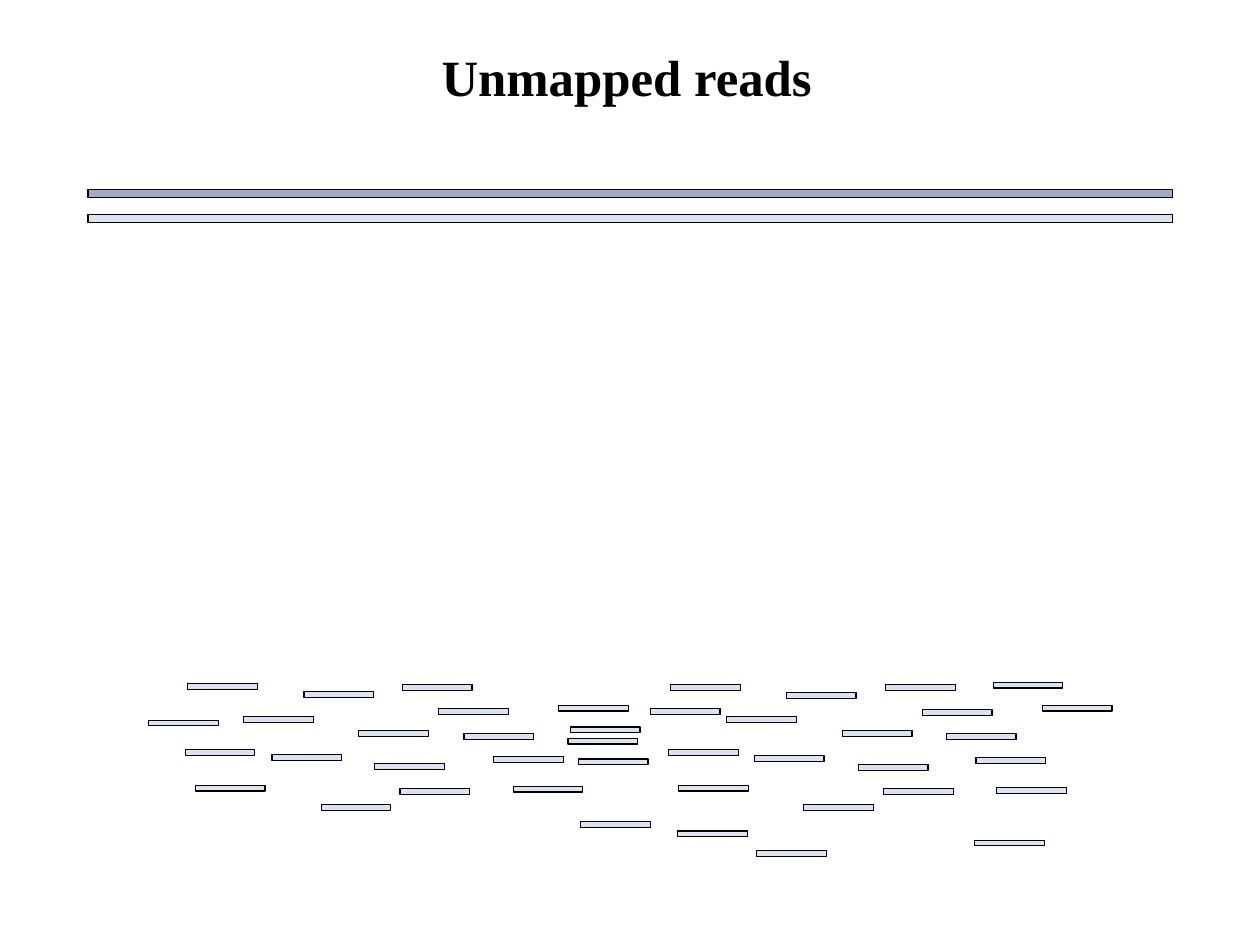
from pptx import Presentation
from pptx.dml.color import RGBColor
from pptx.enum.shapes import MSO_SHAPE
from pptx.enum.text import MSO_ANCHOR, PP_ALIGN
from pptx.util import Inches, Pt

RECT = MSO_SHAPE.RECTANGLE
MIDDLE, CENTER = MSO_ANCHOR.MIDDLE, PP_ALIGN.CENTER

# Content
TITLE = "Unmapped reads"
BLACK, DARK_BLUE, PALE_BLUE = "000000", "9DADC6", "DBE3F0"
TITLE_FORMAT = {"name": "Times New Roman", "size": Pt(32), "bold": True}

# Long bars: top, fill
BARS = [(1.66, DARK_BLUE), (1.88, PALE_BLUE)]
BAR_LEFT, BAR_SIZE = 0.77, (9.49, 0.07)

# Short reads: left, top
READS = [
    (2.38, 6.6), (3.28, 6.68), (2.81, 7.04), (3.84, 6.2), (3.14, 6.39),
    (4.06, 6.42), (3.5, 6.9), (2.13, 6.27), (1.62, 6.56), (1.71, 6.87),
    (1.3, 6.3), (1.64, 5.98), (2.66, 6.05), (3.52, 5.99), (6.62, 7.44),
    (4.89, 6.17), (4.99, 6.36), (4.32, 6.62), (4.49, 6.88), (6.6, 6.61),
    (7.51, 6.69), (7.03, 7.04), (8.07, 6.21), (7.37, 6.39), (8.28, 6.42),
    (7.73, 6.9), (6.36, 6.27), (5.85, 6.56), (5.94, 6.87), (5.06, 6.64),
    (5.87, 5.99), (6.88, 6.06), (7.75, 5.99), (8.69, 5.97), (9.12, 6.17),
    (5.69, 6.2), (8.54, 6.63), (8.72, 6.89), (5.93, 7.27), (5.08, 7.19),
    (4.97, 6.46), (8.53, 7.35),
]
READ_SIZE = (0.61, 0.05)


def color(value):
    return RGBColor.from_string(value)


def add_bar(s, left, top, size, fill):
    sp = s.shapes.add_shape(RECT, *map(Inches, (left, top, *size)))
    sp.shadow.inherit = False
    sp.fill.solid()
    sp.fill.fore_color.rgb = color(fill)
    sp.line.color.rgb = color(BLACK)
    sp.line.width = Pt(0.75)


def add_title(s):
    sp = s.shapes.title
    sp.left, sp.top, sp.width, sp.height = map(Inches, (0.78, 0.01, 9.41, 1.38))
    tf = sp.text_frame
    tf.margin_left = tf.margin_right = tf.margin_top = tf.margin_bottom = 0
    tf.vertical_anchor = MIDDLE
    p = tf.paragraphs[0]
    p.alignment, p.line_spacing = CENTER, 0.93
    r = p.add_run()
    r.text = TITLE
    for key, value in TITLE_FORMAT.items():
        setattr(r.font, key, value)
    r.font.color.rgb = color(BLACK)


def main():
    prs = Presentation()
    # 11.02 by 8.27 inches, exact in points
    prs.slide_width, prs.slide_height = Pt(793.75), Pt(595.25)
    s = prs.slides.add_slide(prs.slide_layouts[5])
    add_title(s)

    # Long bars under the title
    for top, fill in BARS:
        add_bar(s, BAR_LEFT, top, BAR_SIZE, fill)

    # Scattered reads
    for left, top in READS:
        add_bar(s, left, top, READ_SIZE, PALE_BLUE)

    prs.save("out.pptx")


if __name__ == "__main__":
    main()
